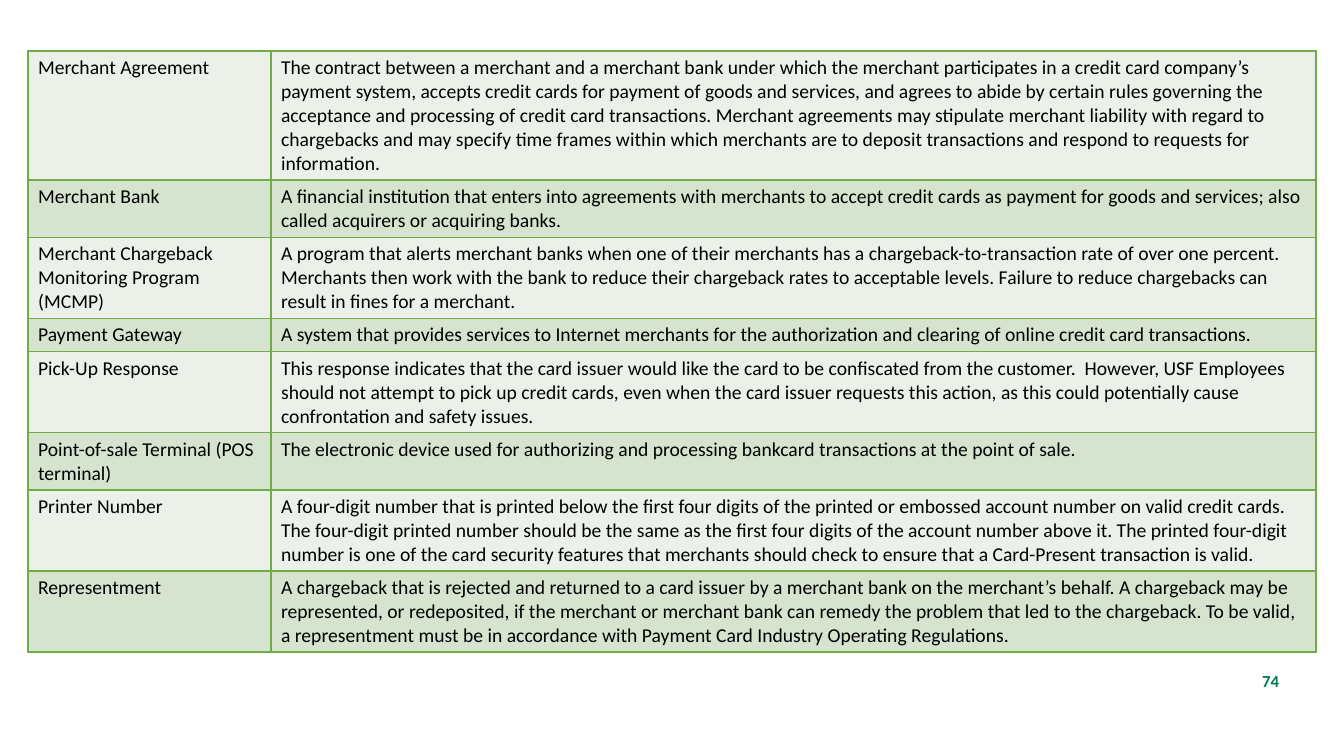
import lxml.etree
import pptx
import pptx.dml.color
import pptx.enum.text
import pptx.oxml.ns
import pptx.util

PX = 914400 / 100.8

THEME = {
    "font": "Calibri",
    "text": "000000",
    "number": "007851",
    "border": "70AD47",
    "bands": ("EBF1E9", "D5E3CF"),
    "body_size": 14,
    "number_size": 12,
    "border_width": 1,
}

LINE, CELL_PADDING = 24, 9

# term, definition, number of text lines in the row
GLOSSARY = [
    ("Merchant Agreement",
     "The contract between a merchant and a merchant bank under which the merchant participates in a "
     "credit card company’s payment system, accepts credit cards for payment of goods and services, and "
     "agrees to abide by certain rules governing the acceptance and processing of credit card "
     "transactions. Merchant agreements may stipulate merchant liability with regard to chargebacks and "
     "may specify time frames within which merchants are to deposit transactions and respond to requests "
     "for information.", 5),
    ("Merchant Bank",
     "A financial institution that enters into agreements with merchants to accept credit cards as "
     "payment for goods and services; also called acquirers or acquiring banks.", 2),
    ("Merchant Chargeback Monitoring Program (MCMP)",
     "A program that alerts merchant banks when one of their merchants has a chargeback-to-transaction "
     "rate of over one percent. Merchants then work with the bank to reduce their chargeback rates to "
     "acceptable levels. Failure to reduce chargebacks can result in fines for a merchant.", 3),
    ("Payment Gateway",
     "A system that provides services to Internet merchants for the authorization and clearing of online "
     "credit card transactions.", 1),
    ("Pick-Up Response",
     "This response indicates that the card issuer would like the card to be confiscated from the "
     "customer.  However, USF Employees should not attempt to pick up credit cards, even when the card "
     "issuer requests this action, as this could potentially cause confrontation and safety issues.", 3),
    ("Point-of-sale Terminal (POS terminal)",
     "The electronic device used for authorizing and processing bankcard transactions at the point of "
     "sale.", 2),
    ("Printer Number",
     "A four-digit number that is printed below the first four digits of the printed or embossed account "
     "number on valid credit cards. The four-digit printed number should be the same as the first four "
     "digits of the account number above it. The printed four-digit number is one of the card security "
     "features that merchants should check to ensure that a Card-Present transaction is valid.", 3),
    ("Representment",
     "A chargeback that is rejected and returned to a card issuer by a merchant bank on the merchant’s "
     "behalf. A chargeback may be represented, or redeposited, if the merchant or merchant bank can "
     "remedy the problem that led to the chargeback. To be valid, a representment must be in accordance "
     "with Payment Card Industry Operating Regulations.", 3),
]


def px(length):
    return pptx.util.Emu(round(length * PX))


def rgb(value):
    return pptx.dml.color.RGBColor.from_string(value)


def write(frame, text, size, color, bold=False):
    para = frame.paragraphs[0]
    span = para.add_run()
    span.text = text
    values = {"name": THEME["font"], "size": pptx.util.Pt(size), "bold": bold}
    for name, value in values.items():
        setattr(span.font, name, value)
    span.font.color.rgb = rgb(color)
    return para


def add_borders(cell):
    properties = cell._tc.get_or_add_tcPr()
    qn = pptx.oxml.ns.qn
    for side in ("a:lnL", "a:lnR", "a:lnT", "a:lnB"):
        line = lxml.etree.SubElement(properties, qn(side))
        line.set("w", str(pptx.util.Pt(THEME["border_width"])))
        fill = lxml.etree.SubElement(line, qn("a:solidFill"))
        lxml.etree.SubElement(fill, qn("a:srgbClr")).set("val", THEME["border"])


def glossary_table(page, left, top, width, term_width):
    heights = [LINE * lines + CELL_PADDING for *_, lines in GLOSSARY]
    frame = page.shapes.add_table(
        len(GLOSSARY), 2, px(left), px(top), px(width), px(sum(heights)))
    table = frame.table
    table.first_row = table.horz_banding = False
    for column, column_width in zip(table.columns, (term_width, width - term_width)):
        column.width = px(column_width)
    for index, (term, definition, _) in enumerate(GLOSSARY):
        table.rows[index].height = px(heights[index])
        for cell, text in zip(table.rows[index].cells, (term, definition)):
            add_borders(cell)
            cell.fill.solid()
            cell.fill.fore_color.rgb = rgb(THEME["bands"][index % 2])
            write(cell.text_frame, text, THEME["body_size"], THEME["text"])


def page_number(page, left, top, width, height, number):
    box = page.shapes.add_textbox(px(left), px(top), px(width), px(height))
    box.text_frame.word_wrap = True
    box.text_frame.vertical_anchor = pptx.enum.text.MSO_ANCHOR.MIDDLE
    para = write(box.text_frame, number, THEME["number_size"], THEME["number"], bold=True)
    para.alignment = pptx.enum.text.PP_ALIGN.RIGHT


def main():
    deck = pptx.Presentation()
    deck.slide_width, deck.slide_height = px(1344), px(756)
    page = deck.slides.add_slide(deck.slide_layouts[6])
    page_number(page, 1195, 666, 94, 29, "74")
    glossary_table(page, 28, 51, 1288, 243)
    deck.save("out.pptx")


if __name__ == "__main__":
    main()
